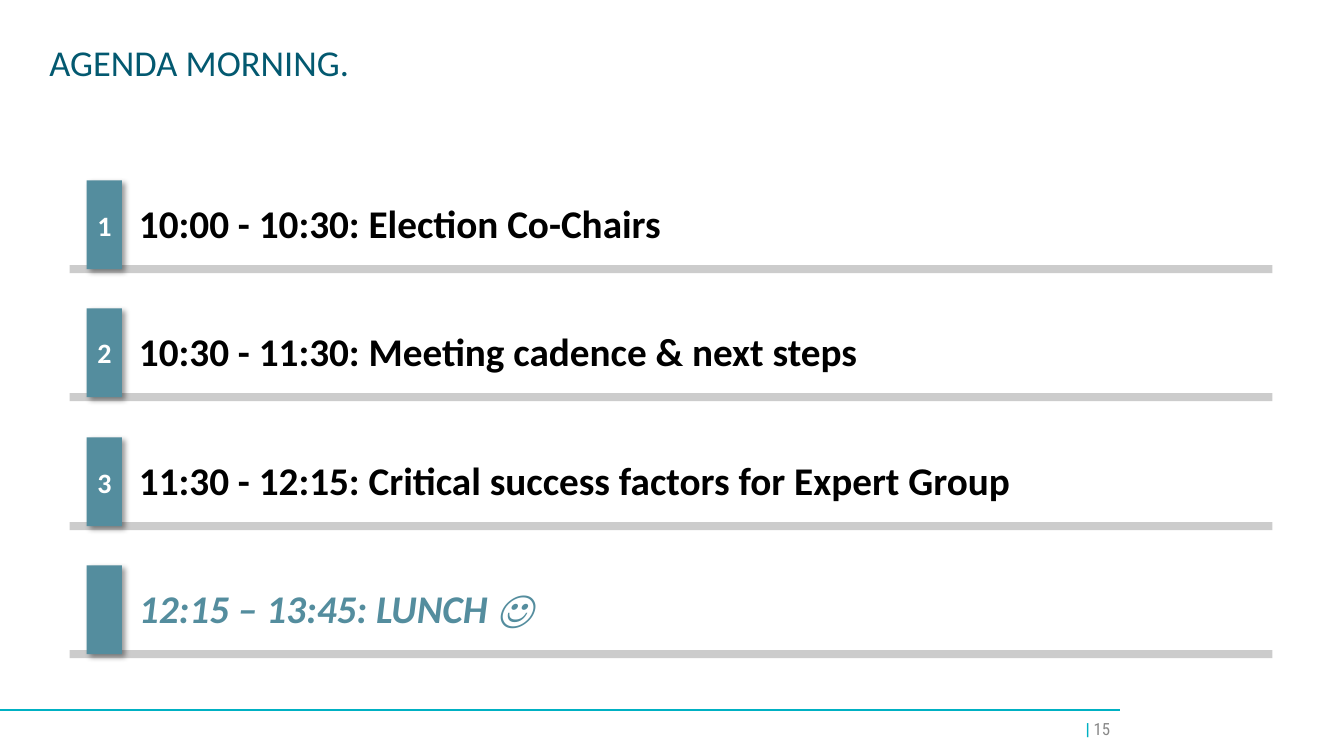
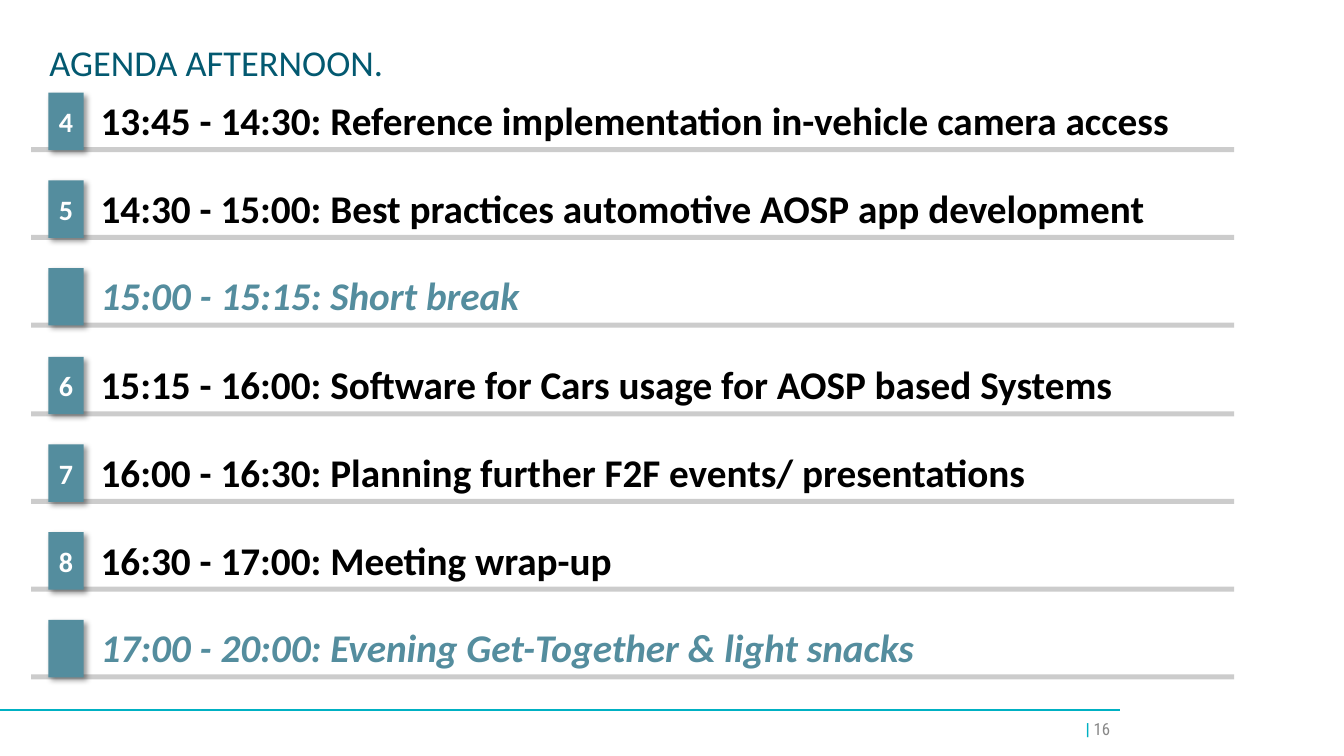
from lxml.etree import SubElement
from pptx import Presentation
from pptx.dml.color import RGBColor
from pptx.enum.shapes import MSO_CONNECTOR, MSO_SHAPE
from pptx.enum.text import MSO_ANCHOR, PP_ALIGN
from pptx.oxml.ns import qn
from pptx.util import Emu, Pt

# Content: (number, agenda item); items without a number are breaks.
# Geometry in px: left edge, first and last row top, label, badge and rule heights.
AGENDAS = [
    {
        "title": "AGENDA MORNING.",
        "page": "15",
        "left": 69, "first": 179, "last": 561,
        "label_height": 84, "badge_height": 88, "rule_height": 8,
        "items": [
            ("1", "10:00 - 10:30: Election Co-Chairs"),
            ("2", "10:30 - 11:30: Meeting cadence & next steps"),
            ("3", "11:30 - 12:15: Critical success factors for Expert Group"),
            ("", "12:15 – 13:45: LUNCH ☺"),
        ],
    },
    {
        "title": "AGENDA AFTERNOON.",
        "page": "16",
        "left": 31, "first": 92, "last": 615,
        "label_height": 54, "badge_height": 57, "rule_height": 5,
        "items": [
            ("4", "13:45 - 14:30: Reference implementation in-vehicle camera access"),
            ("5", "14:30 - 15:00: Best practices automotive AOSP app development"),
            ("", "15:00 - 15:15: Short break"),
            ("6", "15:15 - 16:00: Software for Cars usage for AOSP based Systems"),
            ("7", "16:00 - 16:30: Planning further F2F events/ presentations"),
            ("8", "16:30 - 17:00: Meeting wrap-up"),
            ("", "17:00 - 20:00: Evening Get-Together & light snacks"),
        ],
    },
]

# Shared style
TITLE, ACCENT, BADGE, RULE = "035970", "00B1C3", "548D9E", "CCCCCC"
BLACK, WHITE, GREY = "000000", "FFFFFF", "888888"
BODY_FONT, FOOTER_FONT = "Calibri", "Roboto Condensed"
TITLE_BOX = (39, 40, 1150, 68)
PAGE_BOX = (811, 703, 300, 40)
FOOTER_Y, FOOTER_END = 704, 1111


def px(length):
    return Emu(length * 9144)


def box(*lengths):
    return [px(length) for length in lengths]


def rgb(value):
    return RGBColor.from_string(value)


def style(font, size, color, name=BODY_FONT, bold=False, italic=False):
    font.size, font.name, font.bold, font.italic = Pt(size), name, bold, italic
    font.color.rgb = rgb(color)


def add_block(shapes, bounds, color):
    block = shapes.add_shape(MSO_SHAPE.RECTANGLE, *box(*bounds))
    block.shadow.inherit = False
    block.fill.solid()
    block.fill.fore_color.rgb = rgb(color)
    block.line.fill.background()
    return block


def add_text(shapes, bounds):
    frame = shapes.add_textbox(*box(*bounds)).text_frame
    frame.word_wrap = True
    frame.vertical_anchor = MSO_ANCHOR.MIDDLE
    return frame


def cast_shadow(shape):
    effects = shape._element.spPr.find(qn("a:effectLst"))
    shadow = SubElement(effects, qn("a:outerShdw"), blurRad=str(Pt(4)),
                        dist=str(Pt(3)), dir=str(45 * 60000), rotWithShape="0")
    color = SubElement(shadow, qn("a:srgbClr"), val=BLACK)
    SubElement(color, qn("a:alpha"), val="40000")


def add_row(slide, agenda, top, number, item):
    left, label_height = agenda["left"], agenda["label_height"]
    row = slide.shapes.add_group_shape().shapes
    add_block(row, (left, top + label_height, 1193, agenda["rule_height"]), RULE)

    badge = add_block(row, (left + 17, top, 35, agenda["badge_height"]), BADGE)
    cast_shadow(badge)
    if number:
        frame = badge.text_frame
        frame.margin_left = frame.margin_right = 0
        frame.vertical_anchor = MSO_ANCHOR.MIDDLE
        frame.text = number
        frame.paragraphs[0].alignment = PP_ALIGN.CENTER
        style(frame.paragraphs[0].runs[0].font, 20, WHITE, bold=True)

    label = add_text(row, (left + 59, top, 1135, label_height))
    label.text = item
    style(label.paragraphs[0].runs[0].font, 28, BLACK if number else BADGE,
          bold=True, italic=not number)


def add_title(slide, text):
    frame = slide.shapes.title.text_frame
    frame.text = text
    frame.vertical_anchor = MSO_ANCHOR.TOP
    heading = frame.paragraphs[0]
    heading.alignment = PP_ALIGN.LEFT
    heading.line_spacing = 0.9
    style(heading.runs[0].font, 26, TITLE)


def add_footer(slide, page):
    line = slide.shapes.add_connector(
        MSO_CONNECTOR.STRAIGHT, *box(0, FOOTER_Y, FOOTER_END, FOOTER_Y))
    line.line.color.rgb = rgb(ACCENT)
    line.line.width = Pt(1.5)
    SubElement(line._element.spPr, qn("a:effectLst"))

    paragraph = add_text(slide.shapes, PAGE_BOX).paragraphs[0]
    paragraph.alignment = PP_ALIGN.RIGHT
    for text, color, bold in (("| ", ACCENT, True), (page, GREY, False)):
        run = paragraph.add_run()
        run.text = text
        style(run.font, 12, color, FOOTER_FONT, bold)


def main():
    prs = Presentation()
    prs.slide_width, prs.slide_height = box(1333, 750)
    layout = prs.slide_layouts.get_by_name("Title Only")
    heading = layout.placeholders[0]
    heading.left, heading.top, heading.width, heading.height = box(*TITLE_BOX)

    for agenda in AGENDAS:
        slide = prs.slides.add_slide(layout)
        add_title(slide, agenda["title"])
        pitch = (agenda["last"] - agenda["first"]) / (len(agenda["items"]) - 1)
        for index, (number, item) in enumerate(agenda["items"]):
            add_row(slide, agenda, round(agenda["first"] + index * pitch), number, item)
        add_footer(slide, agenda["page"])

    prs.save("out.pptx")


if __name__ == "__main__":
    main()
